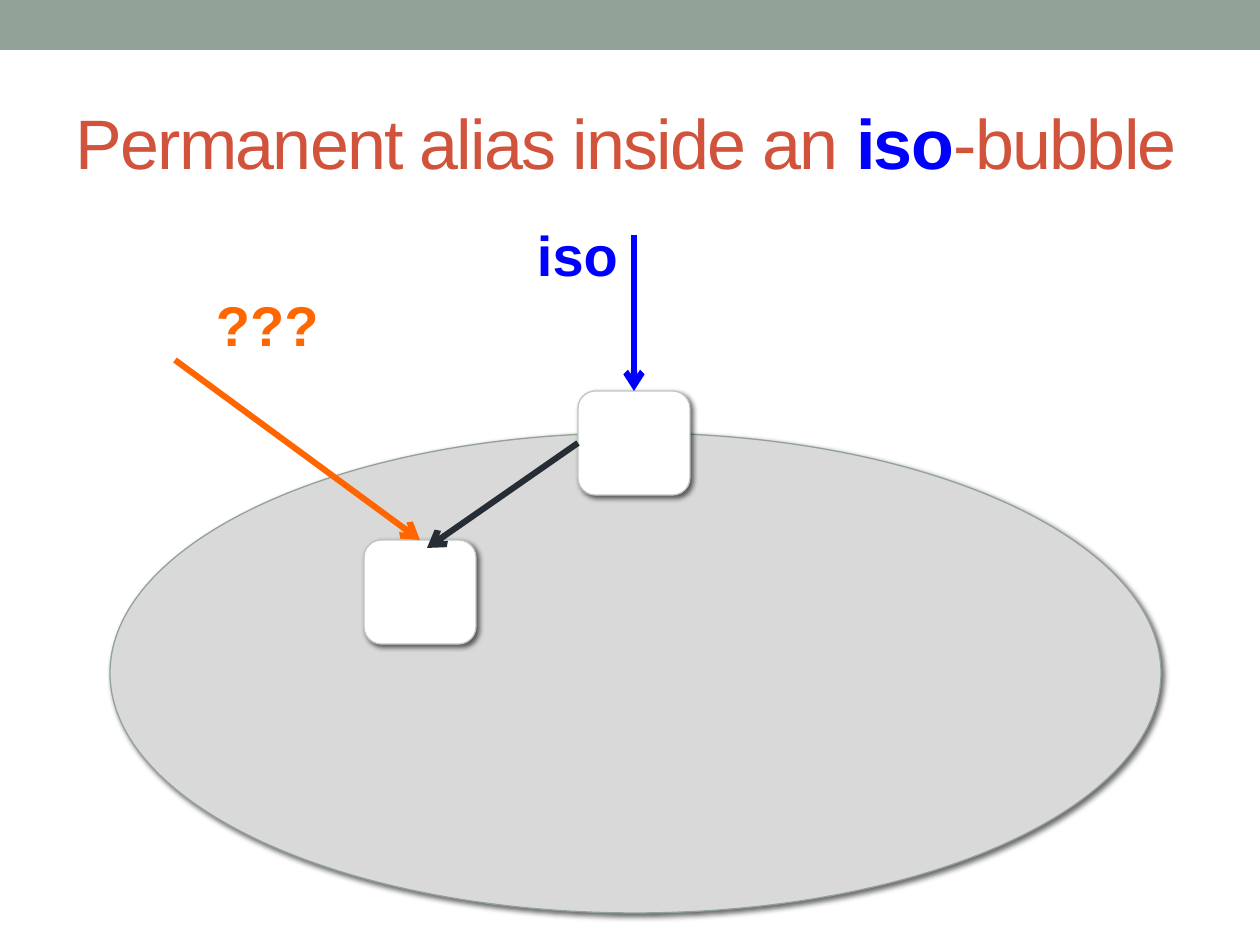
from typing import NamedTuple, Optional

from lxml.etree import SubElement
from pptx import Presentation
from pptx.dml.color import RGBColor
from pptx.enum.shapes import MSO_CONNECTOR, MSO_SHAPE
from pptx.enum.text import MSO_ANCHOR, MSO_AUTO_SIZE, PP_ALIGN
from pptx.oxml.ns import qn
from pptx.util import Emu, Pt

SCALE = 914400 / 126  # EMU in one px
BLUE, ORANGE, RED = "0000FF", "FF6600", "D2533C"
SAGE, DARK, WHITE, GREY = "93A299", "262D35", "FFFFFF", "D9D9D9"
MIST = "BEC7C2"


class Node(NamedTuple):
    kind: MSO_SHAPE
    area: tuple
    fill: str
    line: Optional[str]


class Arrow(NamedTuple):
    start: tuple
    end: tuple
    hue: str
    source: Optional[tuple] = None  # node key and side
    target: Optional[tuple] = None


class Label(NamedTuple):
    text: str
    area: tuple
    hue: str


NODES = {
    "bar": Node(MSO_SHAPE.RECTANGLE, (0, 0, 1260, 50), SAGE, None),
    "bubble": Node(MSO_SHAPE.OVAL, (110, 433, 1051, 480), GREY, SAGE),
    "entry": Node(MSO_SHAPE.ROUNDED_RECTANGLE, (578, 391, 112, 104), WHITE, MIST),
    "inner": Node(MSO_SHAPE.ROUNDED_RECTANGLE, (364, 540, 112, 104), WHITE, MIST),
}
ARROWS = [
    Arrow((634, 235), (634, 391), BLUE, target=("entry", 0)),
    Arrow((578, 443), (427, 548), DARK, source=("entry", 1)),
    Arrow((175, 360), (420, 540), ORANGE, target=("inner", 0)),
]
LABELS = [
    Label("iso", (537, 220, 110, 70), BLUE),
    Label("???", (216, 291, 110, 70), ORANGE),
]
TITLE = [("Permanent alias inside an ", RED, False), ("iso", BLUE, True),
         ("-bubble", RED, False)]


def px(*sizes: int) -> list:
    return [Emu(round(size * SCALE)) for size in sizes]


def color(code: str) -> RGBColor:
    return RGBColor.from_string(code)


def style(font, size: int, hue: str, bold: bool) -> None:
    for key, value in {"name": "Arial", "size": Pt(size), "bold": bold}.items():
        setattr(font, key, value)
    font.color.rgb = color(hue)


def shade(shape) -> None:
    """Soft shadow towards the lower right."""
    effects = shape._element.spPr.find(qn("a:effectLst"))
    outer = SubElement(effects, qn("a:outerShdw"), blurRad=str(Pt(3)),
                       dist=str(Pt(2)), dir="2700000", rotWithShape="0")
    tint = SubElement(outer, qn("a:srgbClr"), val="000000")
    SubElement(tint, qn("a:alpha"), val="60000")


def draw_node(slide, node: Node):
    shape = slide.shapes.add_shape(node.kind, *px(*node.area))
    shape.shadow.inherit = False
    shape.fill.solid()
    shape.fill.fore_color.rgb = color(node.fill)
    if node.line:
        shape.line.color.rgb = color(node.line)
        shape.line.width = Pt(0.75)
        shade(shape)
    else:
        shape.line.fill.background()
    return shape


def draw_arrow(slide, arrow: Arrow, nodes: dict) -> None:
    link = slide.shapes.add_connector(
        MSO_CONNECTOR.STRAIGHT, *px(*arrow.start, *arrow.end))
    for join, spot in ((link.begin_connect, arrow.source),
                       (link.end_connect, arrow.target)):
        if spot:
            join(nodes[spot[0]], spot[1])
    link.line.color.rgb = color(arrow.hue)
    link.line.width = Pt(3.5)
    SubElement(link.line._get_or_add_ln(), qn("a:tailEnd"), type="arrow")
    SubElement(link._element.spPr, qn("a:effectLst"))


def draw_label(slide, label: Label) -> None:
    frame = slide.shapes.add_textbox(*px(*label.area)).text_frame
    frame.word_wrap = True
    for side in ("left", "top", "right", "bottom"):
        setattr(frame, f"margin_{side}", 0)
    run = frame.paragraphs[0].add_run()
    run.text = label.text
    style(run.font, 32, label.hue, True)


def draw_title(slide) -> None:
    title = slide.shapes.title
    for key, value in zip(("left", "top", "width", "height"), px(63, 73, 1134, 136)):
        setattr(title, key, value)
    frame = title.text_frame
    frame.auto_size = MSO_AUTO_SIZE.NONE
    frame.vertical_anchor = MSO_ANCHOR.MIDDLE
    line = frame.paragraphs[0]
    line.alignment = PP_ALIGN.LEFT
    for text, hue, bold in TITLE:
        run = line.add_run()
        run.text = text
        style(run.font, 40, hue, bold)
        run.font._element.set("spc", "-100")


def main() -> None:
    deck = Presentation()
    deck.slide_width, deck.slide_height = px(1260, 945)
    slide = deck.slides.add_slide(deck.slide_layouts[5])
    draw_title(slide)
    # Bar, bubble and the two objects
    nodes = {key: draw_node(slide, node) for key, node in NODES.items()}
    # References and their names
    for arrow in ARROWS:
        draw_arrow(slide, arrow, nodes)
    for label in LABELS:
        draw_label(slide, label)
    deck.save("out.pptx")


if __name__ == "__main__":
    main()
